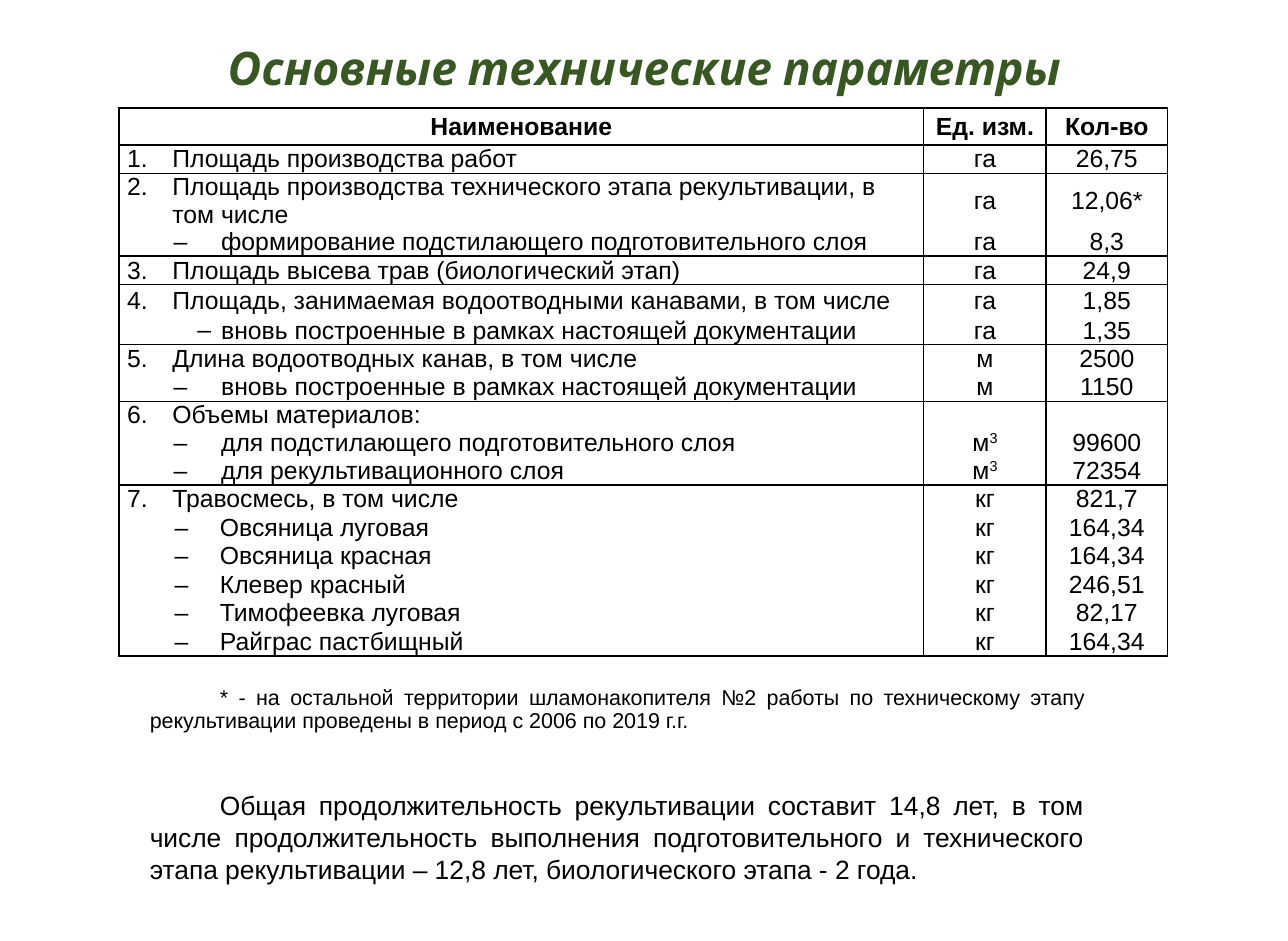
from lxml.etree import SubElement
from pptx import Presentation
from pptx.dml.color import RGBColor
from pptx.enum.text import MSO_ANCHOR, MSO_AUTO_SIZE, PP_ALIGN
from pptx.oxml.ns import qn
from pptx.util import Inches, Pt

COLORS = {"title": "385723", "text": "000000", "border": "000000"}


def add_span(para, text, size, color="text", font="Arial", bold=False, italic=False):
    span = para.add_run()
    span.text = text
    span.font.name = font
    span.font.size = Pt(size)
    span.font.bold = bold
    span.font.italic = italic
    span.font.color.rgb = RGBColor.from_string(COLORS[color])
    return span


def set_borders(cell, top, bottom):
    properties = cell._tc.get_or_add_tcPr()
    sides = {"a:lnL": True, "a:lnR": True, "a:lnT": top, "a:lnB": bottom}
    for tag, visible in sides.items():
        line = SubElement(properties, qn(tag), w=str(Pt(1)))
        if visible:
            fill = SubElement(line, qn("a:solidFill"))
            SubElement(fill, qn("a:srgbClr"), val=COLORS["border"])
        else:
            SubElement(line, qn("a:noFill"))


deck = Presentation()
deck.slide_width = Inches(65 / 6)
deck.slide_height = Inches(95 / 12)
page = deck.slides.add_slide(deck.slide_layouts[0])

title = page.shapes.title
notes = page.placeholders[1]
for box, (left, top, width, height), anchor in [
    (title, (0.26, 0.22, 10.32, 0.69), MSO_ANCHOR.MIDDLE),
    (notes, (1.16, 5.73, 8.06, 1.77), MSO_ANCHOR.TOP),
]:
    box.left, box.top = Inches(left), Inches(top)
    box.width, box.height = Inches(width), Inches(height)
    box.text_frame.word_wrap = True
    box.text_frame.auto_size = MSO_AUTO_SIZE.NONE
    box.text_frame.vertical_anchor = anchor

para = title.text_frame.paragraphs[0]
para.alignment = PP_ALIGN.CENTER
add_span(para, "Основные технические параметры", 28, "title", "Karla", True, True)

note_texts = [
    ("* - на остальной территории шламонакопителя №2 работы по техническому этапу "
     "рекультивации проведены в период с 2006 по 2019 г.г.", 13, 0.9, 0),
    ("Общая продолжительность рекультивации составит 14,8 лет, в том числе "
     "продолжительность выполнения подготовительного и технического этапа "
     "рекультивации – 12,8 лет, биологического этапа - 2 года.", 16, 1, 34),
]
for index, (text, size, spacing, before) in enumerate(note_texts):
    para = notes.text_frame.paragraphs[0] if index == 0 else notes.text_frame.add_paragraph()
    para.alignment = PP_ALIGN.JUSTIFY
    para.line_spacing = spacing
    para.space_before = Pt(before)
    para._p.get_or_add_pPr().set("marL", "0")
    para._p.get_or_add_pPr().set("indent", str(Inches(0.59)))
    add_span(para, text, size)

INDENTS = {"item": (0.38, -0.38), "dash": (0.79, -0.4), "near": (0.79, -0.2), "grass": (0.78, -0.38)}
rows = [
    (0.31, "header", "Наименование", "Ед. изм.", "Кол-во"),
    (0.24, "item", "Площадь производства работ", "га", "26,75"),
    (0.29, "item", "Площадь производства технического этапа рекультивации, в том числе", "га", "12,06*"),
    (0.08, "dash", "формирование подстилающего подготовительного слоя", "га", "8,3"),
    (0.24, "item", "Площадь высева трав (биологический этап)", "га", "24,9"),
    (0.27, "item", "Площадь, занимаемая водоотводными канавами, в том числе", "га", "1,85"),
    (0.08, "near", "вновь построенные в рамках настоящей документации", "га", "1,35"),
    (0.24, "item", "Длина водоотводных канав, в том числе", "м", "2500"),
    (0.24, "dash", "вновь построенные в рамках настоящей документации", "м", "1150"),
    (0.18, "item", "Объемы материалов:", "", ""),
    (0.22, "dash", "для подстилающего подготовительного слоя", "м3", "99600"),
    (0.24, "dash", "для рекультивационного слоя", "м3", "72354"),
    (0.24, "item", "Травосмесь, в том числе", "кг", "821,7"),
    (0.24, "grass", "Овсяница луговая", "кг", "164,34"),
    (0.24, "grass", "Овсяница красная", "кг", "164,34"),
    (0.24, "grass", "Клевер красный", "кг", "246,51"),
    (0.24, "grass", "Тимофеевка луговая", "кг", "82,17"),
    (0.24, "grass", "Райграс пастбищный", "кг", "164,34"),
]
table_height = sum(row[0] for row in rows)
table = page.shapes.add_table(
    len(rows), 3, Inches(1), Inches(0.91), Inches(8.82), Inches(table_height)
).table
table.first_row = False
table.horz_banding = False
for column, width in zip(table.columns, (6.77, 1.03, 1.02)):
    column.width = Inches(width)

group_kinds = ("header", "item")
number = 0
for index, (height, kind, *texts) in enumerate(rows):
    table.rows[index].height = Inches(height)
    number += kind == "item"
    starts_group = kind in group_kinds
    ends_group = index == len(rows) - 1 or rows[index + 1][1] in group_kinds
    for column, text in enumerate(texts):
        cell = table.cell(index, column)
        cell.margin_left = cell.margin_right = Inches(0.07)
        cell.margin_top = cell.margin_bottom = 0
        cell.vertical_anchor = MSO_ANCHOR.MIDDLE
        set_borders(cell, starts_group, ends_group)
        cell.fill.background()
        para = cell.text_frame.paragraphs[0]
        if column == 0 and kind in INDENTS:
            margin, indent = INDENTS[kind]
            properties = para._p.get_or_add_pPr()
            properties.set("marL", str(Inches(margin)))
            properties.set("indent", str(Inches(indent)))
            SubElement(properties, qn("a:buFont"), typeface="Arial")
            if kind == "item":
                SubElement(properties, qn("a:buAutoNum"), type="arabicPeriod", startAt=str(number))
            else:
                SubElement(properties, qn("a:buChar"), char="–")
        else:
            para.alignment = PP_ALIGN.CENTER
        if text == "м3":
            add_span(para, "м", 15)
            power = add_span(para, "3", 15)
            power._r.get_or_add_rPr().set("baseline", "30000")
        elif text:
            add_span(para, text, 15, bold=kind == "header")
        else:
            ending = SubElement(para._p, qn("a:endParaRPr"), sz="1500")
            SubElement(ending, qn("a:latin"), typeface="Arial")

deck.save("out.pptx")
